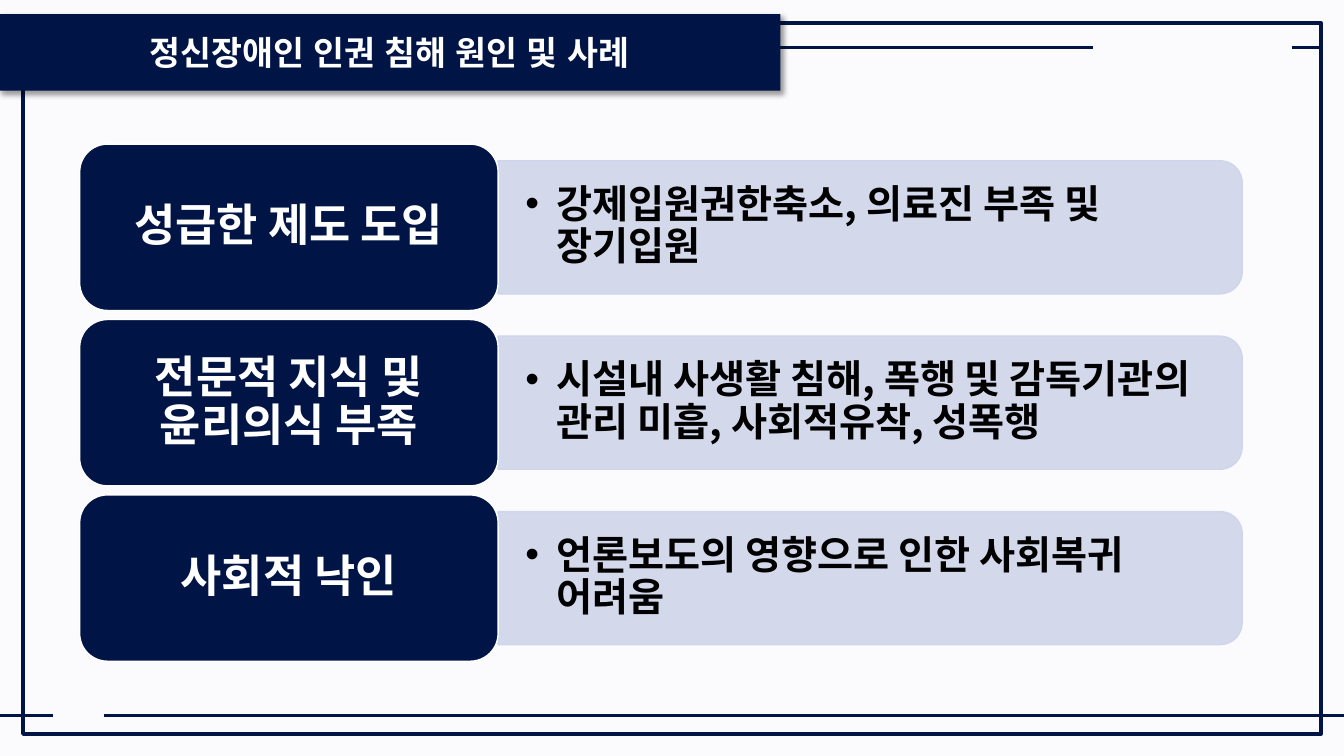
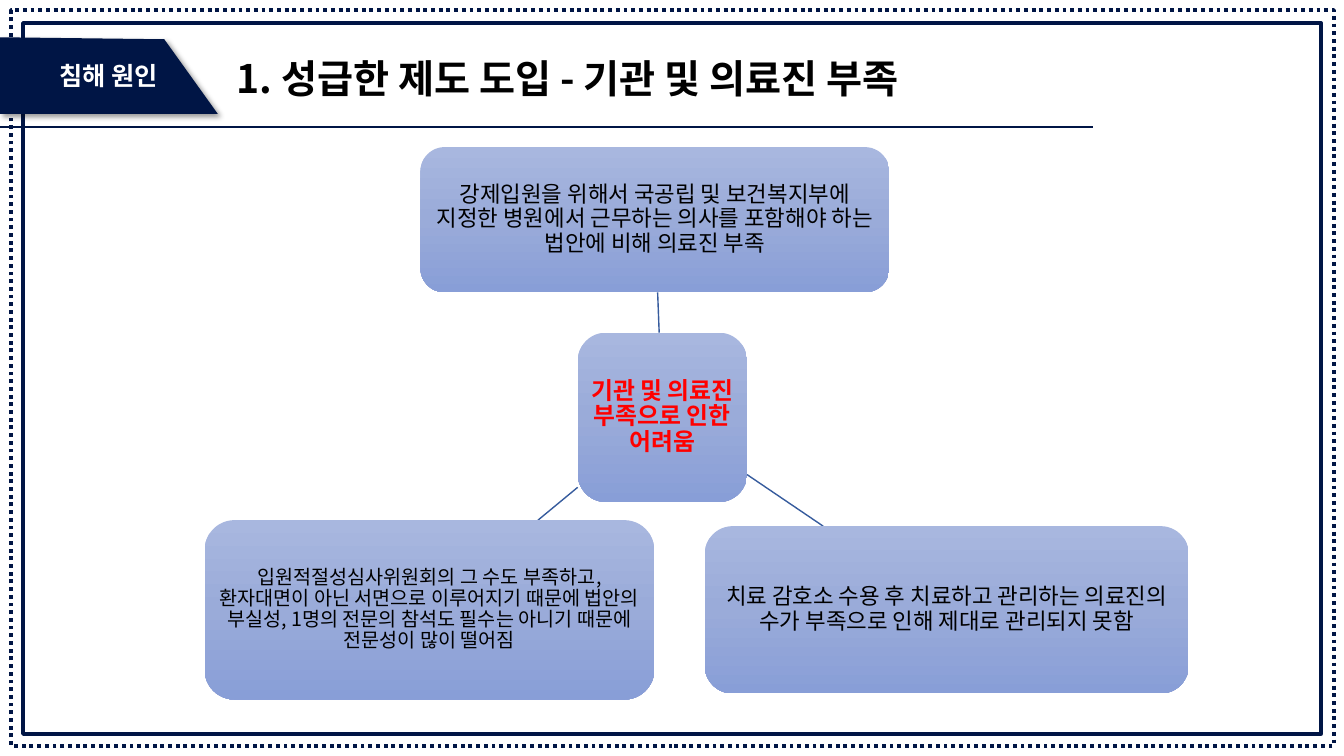
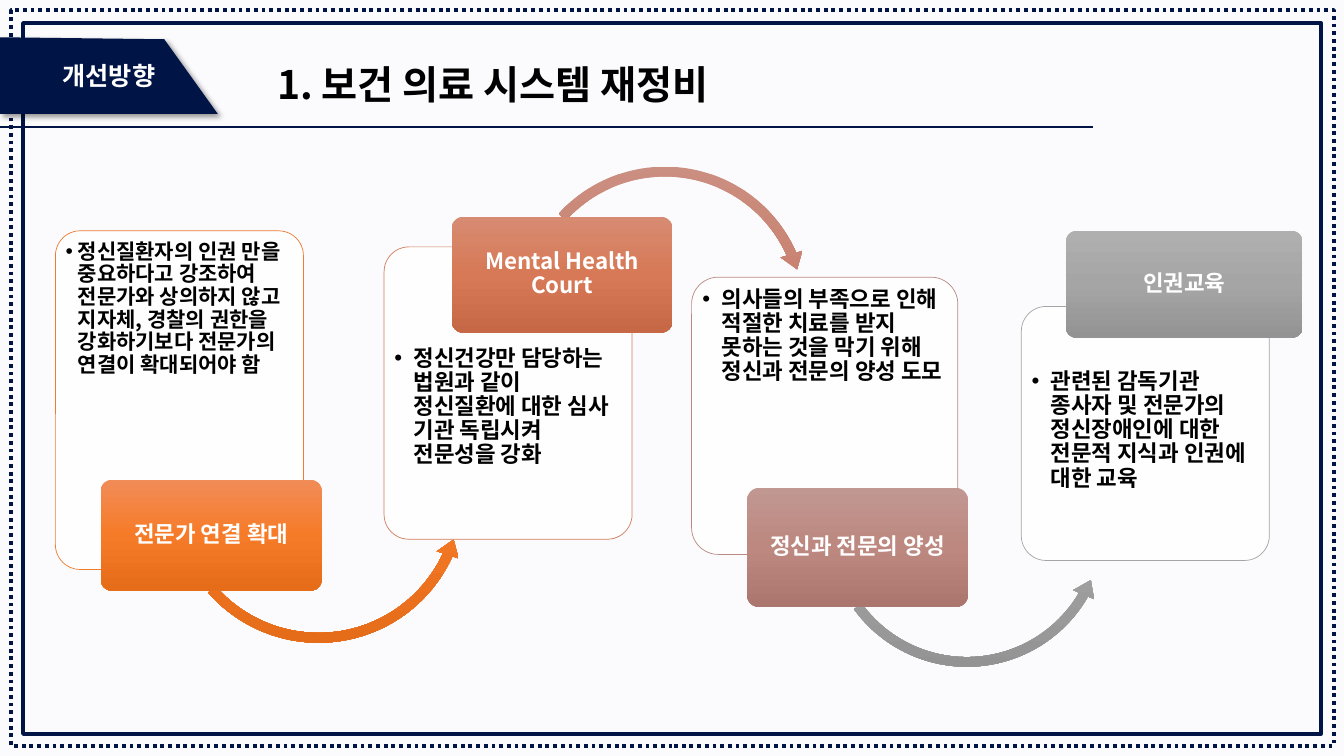
"""Build three slides on human rights violations against people with mental disorders."""
from copy import deepcopy

from lxml.etree import SubElement
from pptx import Presentation
from pptx.dml.color import RGBColor
from pptx.enum.dml import MSO_LINE
from pptx.enum.shapes import MSO_CONNECTOR, MSO_SHAPE
from pptx.enum.text import MSO_ANCHOR, PP_ALIGN
from pptx.oxml.ns import qn
from pptx.util import Inches, Pt

FONT = "Noto Sans CJK KR"
NAVY = RGBColor(0x00, 0x15, 0x45)
WHITE = RGBColor(0xFF, 0xFF, 0xFF)
BLACK = RGBColor(0x00, 0x00, 0x00)
RED = RGBColor(0xFF, 0x00, 0x00)
PAPER = RGBColor(0xFB, 0xFB, 0xFD)
PALE = RGBColor(0xCF, 0xD5, 0xEA)
LINK = RGBColor(0x36, 0x5B, 0x9D)
ORANGE = RGBColor(0xED, 0x7D, 0x31)
CORAL = RGBColor(0xD1, 0x7B, 0x5C)
ROSE = RGBColor(0xB9, 0x8A, 0x82)
GRAY = RGBColor(0xA5, 0xA5, 0xA5)


def shades(*codes):
    return [RGBColor.from_string(code) for code in codes]


BLUE_SHADES = shades("A8B7DF", "9AABD9", "889ED7")
ORANGE_SHADES = shades("F18C57", "F67B28", "E56C19")
CORAL_SHADES = shades("D78B72", "D77956", "C66846")
CLAY_SHADES = shades("CB8F81", "C97E6B", "B76D5B")
ROSE_SHADES = shades("C19791", "BC8880", "AA766E")
GRAY_SHADES = shades("AFAFAF", "A5A5A5", "939393")

CAUSES = [
    ("성급한 제도 도입", "강제입원권한축소, 의료진 부족 및 장기입원"),
    ("전문적 지식 및 윤리의식 부족", "시설내 사생활 침해, 폭행 및 감독기관의 관리 미흡, 사회적유착, 성폭행"),
    ("사회적 낙인", "언론보도의 영향으로 인한 사회복귀 어려움"),
]

HUB = ("기관 및 의료진 부족으로 인한 어려움", (5.73, 3.3, 1.68, 1.68))
SHORTAGES = [
    ("강제입원을 위해서 국공립 및 보건복지부에 지정한 병원에서 근무하는 의사를 포함해야 하는 "
     "법안에 비해 의료진 부족", (4.17, 1.46, 4.65, 1.44), 16),
    ("치료 감호소 수용 후 치료하고 관리하는 의료진의 수가 부족으로 인해 제대로 관리되지 못함",
     (6.99, 5.22, 4.8, 1.66), 16),
    ("입원적절성심사위원회의 그 수도 부족하고, 환자대면이 아닌 서면으로 이루어지기 때문에 "
     "법안의 부실성, 1명의 전문의 참석도 필수는 아니기 때문에 전문성이 많이 떨어짐",
     (2.03, 5.16, 4.46, 1.78), 14),
]

STEPS = [
    dict(name="전문가 연결 확대", label=(1, 4.76, 2.19, 1.1), fill=ORANGE_SHADES,
         text="정신질환자의 인권 만을 중요하다고 강조하여 전문가와 상의하지 않고 지자체, "
              "경찰의 권한을 강화하기보다 전문가의 연결이 확대되어야 함",
         card=(0.55, 2.29, 2.46, 3.36), line=ORANGE, size=15, indent=0.12, top=0.03),
    dict(name="Mental Health Court", label=(4.48, 2.15, 2.19, 1.15), fill=CORAL_SHADES,
         text="정신건강만 담당하는 법원과 같이 정신질환에 대한 심사 기관 독립시켜 전문성을 강화",
         card=(3.81, 2.45, 2.46, 2.9), line=CORAL, size=16, indent=0.19, top=0.92),
    dict(name="정신과 전문의 양성", label=(7.41, 4.84, 2.19, 1.18), fill=ROSE_SHADES,
         text="의사들의 부족으로 인해 적절한 치료를 받지 못하는 것을 막기 위해 정신과 전문의 양성 도모",
         card=(6.86, 2.75, 2.64, 2.75), line=ROSE, size=16, indent=0.19, top=0.03),
    dict(name="인권교육", label=(10.57, 2.29, 2.35, 1.06), fill=GRAY_SHADES,
         text="관련된 감독기관 종사자 및 전문가의 정신장애인에 대한 전문적 지식과 인권에 대한 교육",
         card=(10.13, 3.04, 2.46, 2.52), line=GRAY, size=16, indent=0.19, top=0.56),
]
ARROWS = [
    dict(kind=MSO_SHAPE.LEFT_CIRCULAR_ARROW, box=(1.64, 3.4, 3.04, 3.04), fill=ORANGE_SHADES,
         width=3.2, angles=(6.56, 24.51, 138.77), head=3.7),
    dict(kind=MSO_SHAPE.CIRCULAR_ARROW, box=(5.11, 1.59, 2.97, 2.97), fill=CLAY_SHADES,
         width=3.3, angles=(6.71, 336.22, 222.12), head=3.8),
    dict(kind=MSO_SHAPE.LEFT_CIRCULAR_ARROW, box=(8.14, 3.78, 2.9, 2.9), fill=GRAY_SHADES,
         width=3.3, angles=(6.9, 30.06, 143.98), head=3.9),
]


def set_alpha(color_parent, percent):
    color = next(color_parent.iter(qn("a:srgbClr")))
    SubElement(color, qn("a:alpha"), val=str(percent * 1000))


def paint(sp, fill=None, line=None, width=1, alpha=None):
    sp.shadow.inherit = False
    props = sp.element.spPr
    if fill is None:
        sp.fill.background()
    elif isinstance(fill, list):
        sp.fill.gradient()
        sp.fill.gradient_angle = 270
        stops = props.find(qn("a:gradFill")).find(qn("a:gsLst"))
        stops.insert(1, deepcopy(stops[0]))
        for i, stop in enumerate(sp.fill.gradient_stops):
            stop.color.rgb = fill[i]
            stop.position = i / 2
    else:
        sp.fill.solid()
        sp.fill.fore_color.rgb = fill
        if alpha:
            set_alpha(props.find(qn("a:solidFill")), alpha)
    if line is None:
        sp.line.fill.background()
    else:
        sp.line.color.rgb = line
        sp.line.width = Pt(width)
    return sp


def add_box(s, kind, box, **style):
    return paint(s.shapes.add_shape(kind, *map(Inches, box)), **style)


def add_shadow(sp):
    effects = sp.element.spPr.find(qn("a:effectLst"))
    shadow = SubElement(effects, qn("a:outerShdw"), blurRad=str(Pt(4)), dist=str(Pt(3)),
                        dir="2700000", algn="tl", rotWithShape="0")
    color = SubElement(shadow, qn("a:srgbClr"), val=str(BLACK))
    SubElement(color, qn("a:alpha"), val="40000")


def write(sp, text, size, color=WHITE, bold=True, font=FONT, align=PP_ALIGN.CENTER,
          anchor=MSO_ANCHOR.MIDDLE, margins=(0.1, 0.05, 0.1, 0.05), spacing=None, indent=None):
    tf = sp.text_frame
    tf.word_wrap = True
    tf.vertical_anchor = anchor
    tf.margin_left, tf.margin_top, tf.margin_right, tf.margin_bottom = map(Inches, margins)
    p = tf.paragraphs[0]
    p.alignment = align
    if spacing:
        p.line_spacing = spacing
    if indent:
        props = p._p.get_or_add_pPr()
        props.set("marL", str(Inches(indent)))
        props.set("indent", str(-Inches(indent)))
        SubElement(props, qn("a:buFont"), typeface="Arial")
        SubElement(props, qn("a:buChar"), char="•")
    r = p.add_run()
    r.text = text
    r.font.size = Pt(size)
    r.font.bold = bold
    r.font.color.rgb = color
    r.font.name = font
    SubElement(r.font._element, qn("a:ea"), typeface=font)


def add_text(s, box, text, size, **style):
    write(s.shapes.add_textbox(*map(Inches, box)), text, size, BLACK, align=PP_ALIGN.LEFT, **style)


def add_line(s, start, end, color=NAVY, width=2):
    c = s.shapes.add_connector(MSO_CONNECTOR.STRAIGHT, *map(Inches, (*start, *end)))
    c.line.color.rgb = color
    c.line.width = Pt(width)
    SubElement(c.element.spPr, qn("a:effectLst"))


def new_slide(prs, color):
    s = prs.slides.add_slide(prs.slide_layouts[6])
    s.background.fill.solid()
    s.background.fill.fore_color.rgb = color
    add_box(s, MSO_SHAPE.RECTANGLE, (0.23, 0.23, 12.87, 7.05), line=NAVY, width=3)
    return s


def new_topic_slide(prs, color, tab_text, title, title_box):
    s = new_slide(prs, color)
    dots = add_box(s, MSO_SHAPE.RECTANGLE, (0.11, 0.1, 13.12, 7.3), line=NAVY, width=2.75)
    dots.line.dash_style = MSO_LINE.ROUND_DOT
    corners = [(Inches(x), Inches(y)) for x, y in ((0, 0.37), (1.63, 0.39), (2.16, 1.13), (0, 1.13))]
    outline = s.shapes.build_freeform(*corners[0])
    outline.add_line_segments(corners[1:], close=True)
    tab = paint(outline.convert_to_shape(), fill=NAVY)
    add_shadow(tab)
    write(tab, tab_text, 18)
    add_line(s, (-0.02, 1.26), (10.84, 1.26))
    add_text(s, title_box, title, 28, anchor=MSO_ANCHOR.TOP)
    return s


def center(box):
    x, y, w, h = box
    return x + w / 2, y + h / 2


def edge_point(box, target):
    cx, cy = center(box)
    dx, dy = target[0] - cx, target[1] - cy
    scale = 1 / max(abs(dx) / (box[2] / 2), abs(dy) / (box[3] / 2))
    return cx + dx * scale, cy + dy * scale


def build_causes(prs):
    s = new_slide(prs, PAPER)
    for y, x1, x2 in ((0.47, -0.02, 10.84), (0.47, 12.81, 13.1), (7.1, 0, 0.53), (7.1, 1.03, 13.33)):
        add_line(s, (x1, y), (x2, y))
    banner = add_box(s, MSO_SHAPE.RECTANGLE, (-0.02, 0.14, 7.76, 0.76), fill=NAVY)
    add_shadow(banner)
    write(banner, "정신장애인 인권 침해 원인 및 사례", 24, font="Arial")

    left, label_w, label_h, band_w, band_h = 0.79, 4.15, 1.65, 7.38, 1.32
    band_left = left + label_w
    for i, (cause, cases) in enumerate(CAUSES):
        top = 1.43 + 1.74 * i
        middle = top + label_h / 2
        band = add_box(s, MSO_SHAPE.ROUND_2_SAME_RECTANGLE,
                       (band_left + (band_w - band_h) / 2, middle - band_w / 2, band_h, band_w),
                       fill=PALE, line=PALE, alpha=90)
        band.rotation = 90
        add_text(s, (band_left, middle - 0.6, 7.32, 1.19), cases, 28,
                 margins=(0.27, 0.14, 0.27, 0.14), spacing=0.9, indent=0.31)
        label = add_box(s, MSO_SHAPE.ROUNDED_RECTANGLE, (left, top, label_w, label_h),
                        fill=NAVY, line=WHITE)
        write(label, cause, 32, margins=(0.13, 0.07, 0.13, 0.07), spacing=0.9)


def build_shortages(prs):
    s = new_topic_slide(prs, WHITE, "침해 원인", "1. 성급한 제도 도입 - 기관 및 의료진 부족",
                        (2.25, 0.49, 8.65, 0.57))
    hub_text, hub_box = HUB
    hub = add_box(s, MSO_SHAPE.ROUNDED_RECTANGLE, hub_box, fill=BLUE_SHADES)
    write(hub, hub_text, 17, RED, margins=(0.05,) * 4, spacing=0.9)
    for text, box, size in SHORTAGES:
        add_line(s, edge_point(hub_box, center(box)), edge_point(box, center(hub_box)), LINK, 1)
        node = add_box(s, MSO_SHAPE.ROUNDED_RECTANGLE, box, fill=BLUE_SHADES)
        write(node, text, size, BLACK, bold=False, margins=(0.04,) * 4, spacing=0.9)


def build_steps(prs):
    s = new_topic_slide(prs, PAPER, "개선방향", "1. 보건 의료 시스템 재정비", (2.65, 0.55, 5.53, 0.57))
    for i, step in enumerate(STEPS):
        card = add_box(s, MSO_SHAPE.ROUNDED_RECTANGLE, step["card"], fill=WHITE,
                       line=step["line"], width=0.5, alpha=90)
        card.adjustments[0] = 0.1
        write(card, step["text"], step["size"], BLACK, align=PP_ALIGN.LEFT, anchor=MSO_ANCHOR.TOP,
              margins=(0.03, step["top"], 0.03, 0.03), spacing=0.9, indent=step["indent"])
        for arrow in ARROWS[i:i + 1]:
            sp = add_box(s, arrow["kind"], arrow["box"], fill=arrow["fill"])
            angles = [degrees * 0.6 for degrees in arrow["angles"]]
            for k, value in enumerate([arrow["width"] / 100, *angles, arrow["head"] / 100]):
                sp.adjustments[k] = value
        label = add_box(s, MSO_SHAPE.ROUNDED_RECTANGLE, step["label"], fill=step["fill"])
        label.adjustments[0] = 0.1
        write(label, step["name"], 16, margins=(0.03, 0.02, 0.03, 0.02), spacing=0.9)


def main():
    prs = Presentation()
    prs.slide_width, prs.slide_height = Inches(13.33), Inches(7.5)
    build_causes(prs)
    build_shortages(prs)
    build_steps(prs)
    prs.save("out.pptx")


if __name__ == "__main__":
    main()
